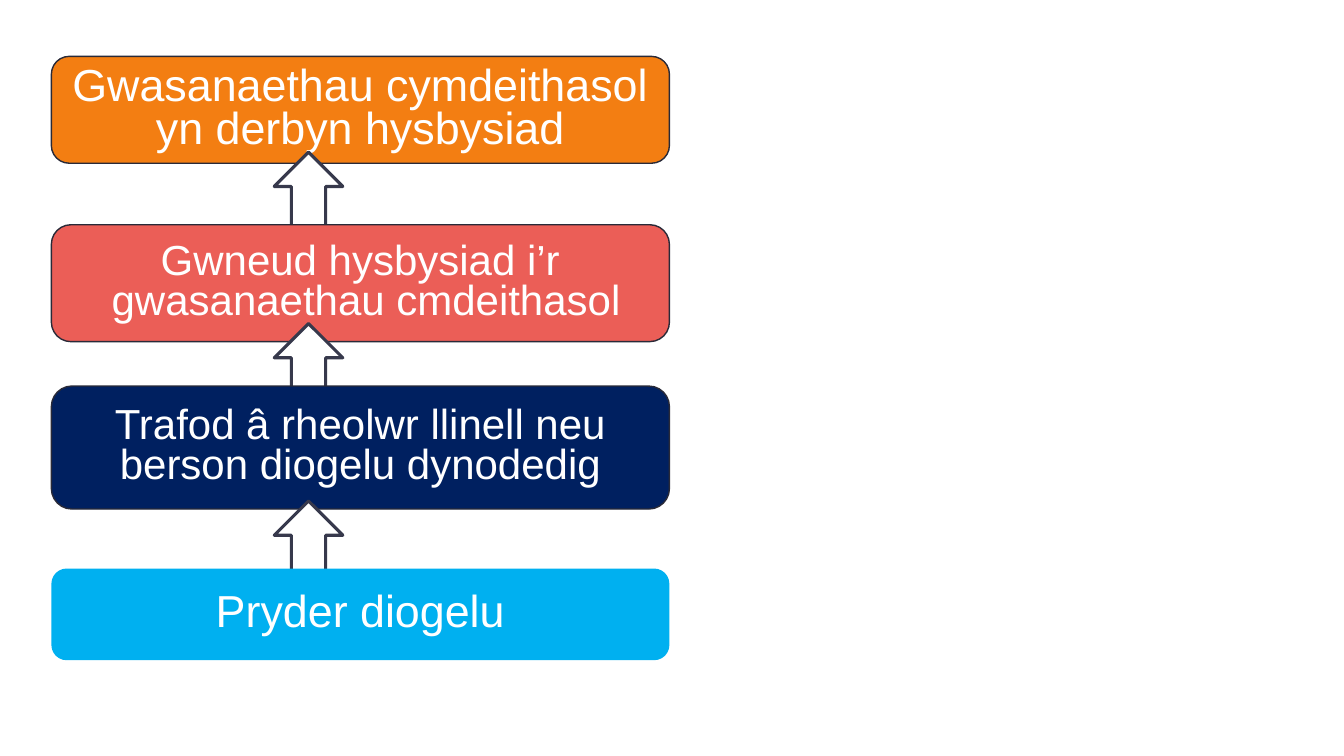
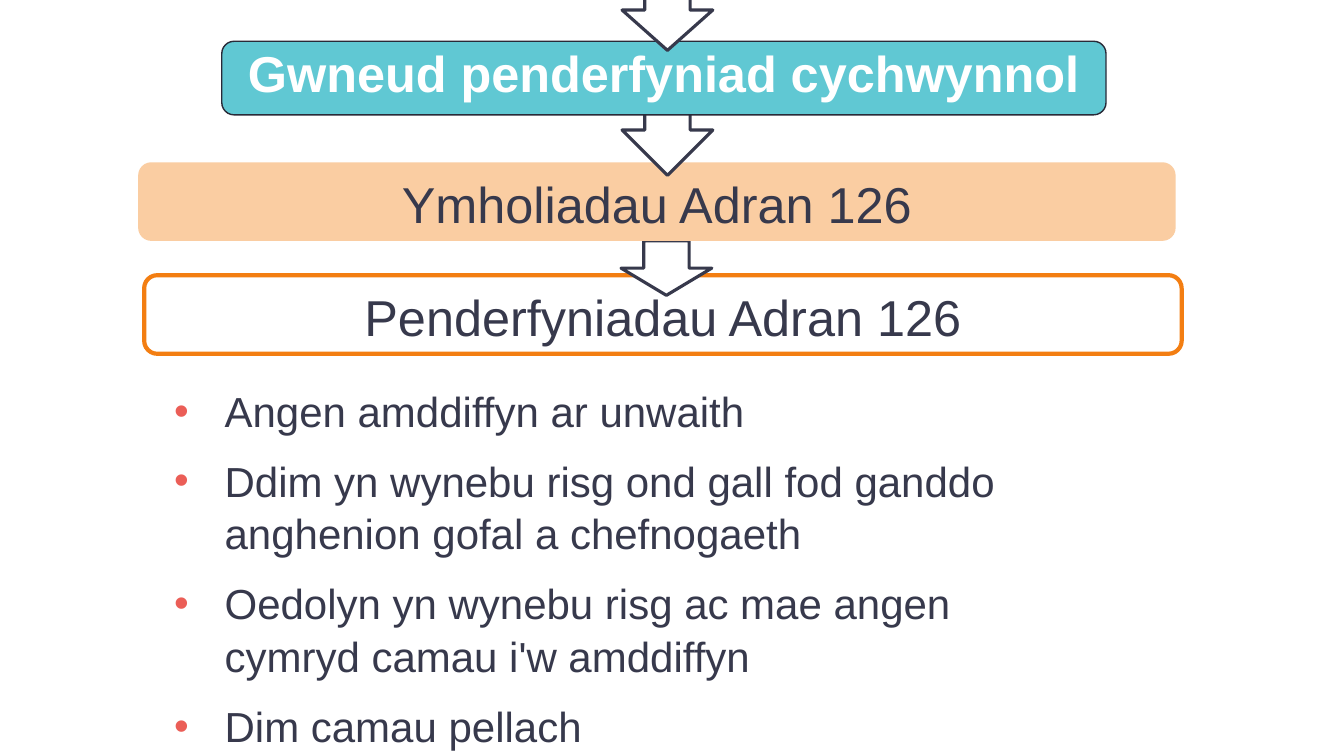
from dataclasses import dataclass
from typing import Optional

from lxml import etree
from pptx import Presentation
from pptx import util as u
from pptx.dml.color import RGBColor
from pptx.enum import shapes, text
from pptx.oxml.ns import qn

EMU_PER_PX = 9144  # 100 px to the inch


@dataclass(frozen=True)
class Theme:
    font: str = "Arial"
    white: str = "FFFFFF"
    ink: str = "37394C"
    edge: str = "292A38"
    orange: str = "F37E12"
    coral: str = "EB5E57"
    navy: str = "002060"
    sky: str = "00B0F0"
    teal: str = "60C8D3"
    peach: str = "FACDA2"
    body_size: int = 30
    step_size: int = 32
    heading_size: int = 36
    tight: float = 0.8
    loose: float = 1.05


THEME = Theme()


@dataclass(frozen=True)
class Area:
    left: int
    top: int
    width: int
    height: int


@dataclass(frozen=True)
class Step:
    area: Area
    lines: tuple[str, ...]
    size: int
    fill: Optional[str]
    edge: Optional[str] = THEME.edge
    edge_width: float = 1
    color: str = THEME.white
    bold: bool = False
    spacing: float = THEME.tight


@dataclass(frozen=True)
class Arrow:
    area: Area
    kind: shapes.MSO_SHAPE = shapes.MSO_SHAPE.DOWN_ARROW


def px(length: int) -> u.Emu:
    return u.Emu(length * EMU_PER_PX)


def place(area: Area) -> tuple[u.Emu, u.Emu, u.Emu, u.Emu]:
    return px(area.left), px(area.top), px(area.width), px(area.height)


def add_span(para, words: str, size: int, color: str, bold: bool = False) -> None:
    span = para.add_run()
    span.text = words
    span.font.name = THEME.font
    span.font.size = u.Pt(size)
    span.font.bold = bold
    span.font.color.rgb = RGBColor.from_string(color)


def add_panel(page, kind, area: Area, fill: Optional[str],
              edge: Optional[str], edge_width: float):
    """Add a preset shape without shadow; None leaves fill or edge empty."""
    panel = page.shapes.add_shape(kind, *place(area))
    panel.shadow.inherit = False
    if fill:
        panel.fill.solid()
        panel.fill.fore_color.rgb = RGBColor.from_string(fill)
    else:
        panel.fill.background()
    if edge:
        panel.line.color.rgb = RGBColor.from_string(edge)
        panel.line.width = u.Pt(edge_width)
    else:
        panel.line.fill.background()
    return panel


def add_step(page, step: Step) -> None:
    panel = add_panel(page, shapes.MSO_SHAPE.ROUNDED_RECTANGLE, step.area,
                      step.fill, step.edge, step.edge_width)
    frame = panel.text_frame
    frame.word_wrap = True
    frame.vertical_anchor = text.MSO_ANCHOR.MIDDLE
    para = frame.paragraphs[0]
    para.alignment = text.PP_ALIGN.CENTER
    para.line_spacing = step.spacing
    for index, line in enumerate(step.lines):
        if index:
            para.add_line_break()
        add_span(para, line, step.size, step.color, step.bold)


def add_flow(page, parts: list[Step | Arrow]) -> None:
    """Draw steps and arrows from back to front."""
    for part in parts:
        if isinstance(part, Step):
            add_step(page, part)
        else:
            add_panel(page, part.kind, part.area, THEME.white, THEME.ink, 2.25)


def set_bullet(para, color: str, indent: int) -> None:
    props = para._p.get_or_add_pPr()
    props.set("marL", str(px(indent)))
    props.set("indent", str(-px(indent)))
    tint = etree.SubElement(props, qn("a:buClr"))
    etree.SubElement(tint, qn("a:srgbClr")).set("val", color)
    etree.SubElement(props, qn("a:buFont")).set("typeface", THEME.font)
    etree.SubElement(props, qn("a:buChar")).set("char", "•")


def add_bullets(page, area: Area, items: list[str]) -> None:
    box = page.shapes.add_textbox(*place(area))
    frame = box.text_frame
    frame.word_wrap = True
    for index, item in enumerate(items):
        para = frame.add_paragraph() if index else frame.paragraphs[0]
        set_bullet(para, THEME.coral, 50)
        para.line_spacing = THEME.loose
        para.space_after = u.Pt(12)
        add_span(para, item, THEME.body_size, THEME.ink)


def build_reporting(page) -> None:
    def step(top: int, height: int, fill: str, size: int, *lines: str,
             edge: Optional[str] = THEME.edge) -> Step:
        return Step(Area(51, top, 613, height), lines, size, fill, edge)

    def arrow(top: int) -> Arrow:
        return Arrow(Area(272, top, 68, 81), shapes.MSO_SHAPE.UP_ARROW)

    add_flow(page, [
        step(56, 106, THEME.orange, THEME.step_size,
             "Gwasanaethau cymdeithasol yn derbyn hysbysiad"),
        arrow(151),
        step(223, 116, THEME.coral, THEME.body_size,
             "Gwneud hysbysiad i’r", " gwasanaethau cmdeithasol"),
        arrow(321),
        step(383, 122, THEME.navy, THEME.body_size,
             "Trafod â rheolwr llinell neu berson diogelu dynodedig"),
        arrow(497),
        step(564, 91, THEME.sky, THEME.step_size, "Pryder diogelu", edge=None),
    ])


def build_decisions(page) -> None:
    add_flow(page, [
        Step(Area(143, 273, 1029, 78), ("Penderfyniadau Adran 126",),
             THEME.heading_size, None, THEME.orange, 3, THEME.ink,
             spacing=THEME.loose),
        Arrow(Area(616, 239, 90, 54)),
        Step(Area(137, 161, 1029, 78), ("Ymholiadau Adran 126",),
             THEME.heading_size, THEME.peach, None, color=THEME.ink,
             spacing=THEME.loose),
        Arrow(Area(617, 74, 90, 100)),
        Step(Area(220, 41, 877, 73), ("Gwneud penderfyniad cychwynnol",),
             THEME.heading_size, THEME.teal, bold=True),
        Arrow(Area(617, -30, 90, 80)),
    ])
    add_bullets(page, Area(163, 375, 896, 364), [
        "Angen amddiffyn ar unwaith",
        "Ddim yn wynebu risg ond gall fod ganddo anghenion gofal a chefnogaeth",
        "Oedolyn yn wynebu risg ac mae angen cymryd camau i'w amddiffyn",
        "Dim camau pellach",
    ])


def main() -> None:
    deck = Presentation()
    deck.slide_width, deck.slide_height = px(1333), px(750)
    blank = deck.slide_layouts[6]
    for build in (build_reporting, build_decisions):
        build(deck.slides.add_slide(blank))
    deck.save("out.pptx")


if __name__ == "__main__":
    main()
